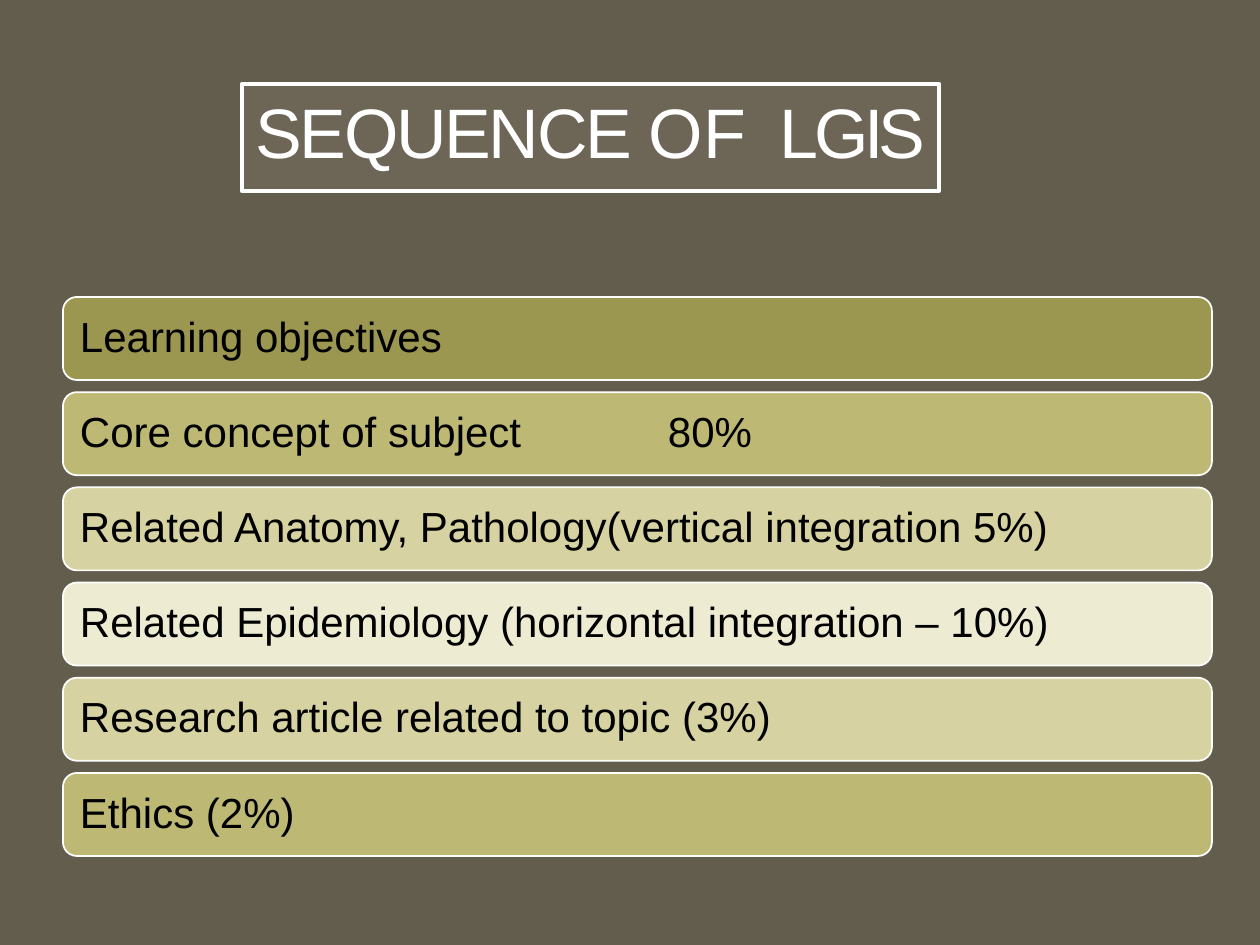
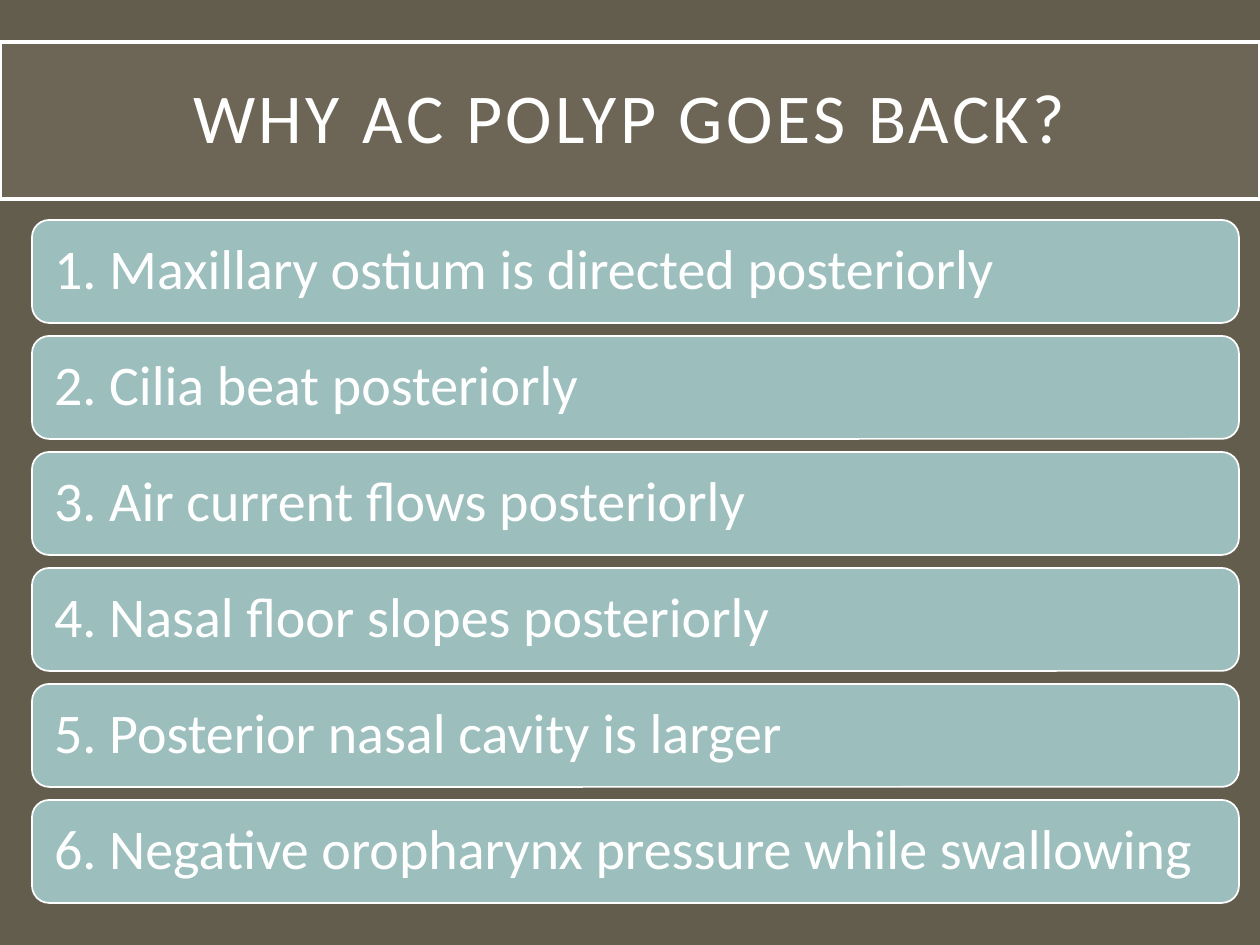
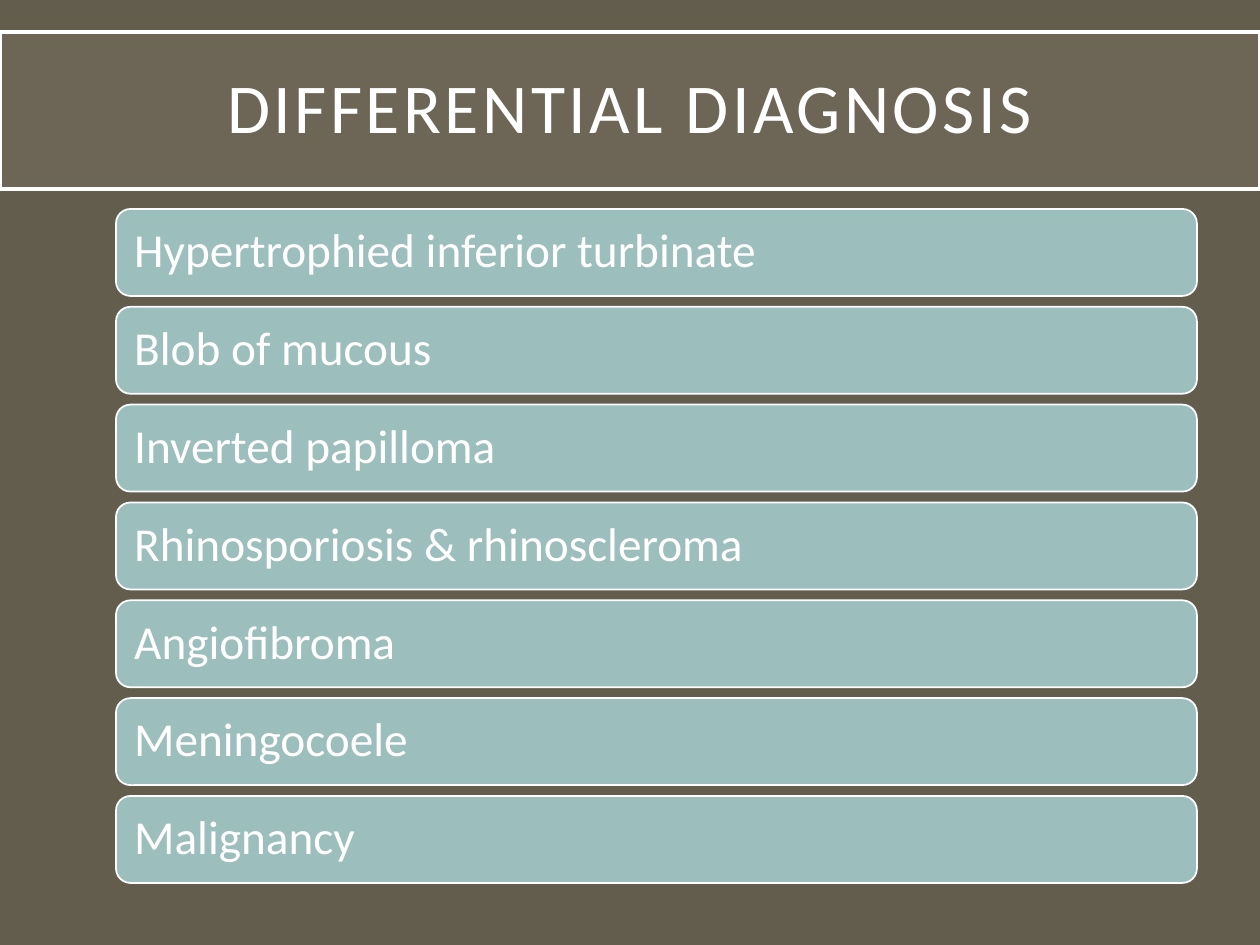
from lxml import etree
from pptx import Presentation
from pptx import util as u
from pptx.dml.color import RGBColor
from pptx.enum import shapes, text
from pptx.oxml.ns import qn

BACKGROUND = RGBColor(0x63, 0x5D, 0x4D)
BAND = RGBColor(0xA7, 0xA0, 0x8E)
WHITE = RGBColor(0xFF, 0xFF, 0xFF)
BLACK = RGBColor(0x00, 0x00, 0x00)
TEAL = RGBColor(0x9C, 0xBE, 0xBD)
OLIVE = RGBColor(0x9B, 0x96, 0x50)
KHAKI = RGBColor(0xBD, 0xB8, 0x74)
SAND = RGBColor(0xD7, 0xD2, 0xA1)
CREAM = RGBColor(0xED, 0xEB, 0xD1)

PX = 914400 // 126
TAB_STOP = 588
BAND_OPACITY = 15
WIDE_INSETS = (25, 25, 25, 25)

# Titles are (text, letter spacing in points) pieces; bars are (left, top, width, bottom).
SLIDES = [
    dict(
        title=[("SEQUENCE ", -1.3), ("OF ", -0.1), (" LGIS", -2.6)],
        title_box=(242, 84, 697, 107), title_insets=(9, 1, 9, 5), font="Arial",
        bars=(63, 297, 1149, 856), bar_height=83, inset=13, size=24, color=BLACK,
        fills=[OLIVE, KHAKI, SAND, CREAM, SAND, KHAKI],
        items=[
            "Learning objectives",
            "Core concept of subject\t80%",
            "Related Anatomy, Pathology(vertical integration 5%)",
            "Related Epidemiology (horizontal integration – 10%)",
            "Research article related to topic (3%)",
            "Ethics (2%)",
        ],
    ),
    dict(
        title=[("WHY AC POLYP GOES BACK?", 2)],
        title_box=(0, 42, 1260, 157), title_insets=WIDE_INSETS, font="Calibri",
        bars=(32, 220, 1207, 903), bar_height=103, inset=17, size=32, color=WHITE,
        fills=[TEAL] * 6,
        items=[
            "1. Maxillary ostium is directed posteriorly",
            "2. Cilia beat posteriorly",
            "3. Air current flows posteriorly",
            "4. Nasal floor slopes posteriorly",
            "5. Posterior nasal cavity is larger",
            "6. Negative oropharynx pressure while swallowing",
        ],
    ),
    dict(
        title=[("DIFFERENTIAL DIAGNOSIS", 2)],
        title_box=(0, 32, 1260, 157), title_insets=WIDE_INSETS, font="Calibri",
        bars=(116, 209, 1081, 883), bar_height=87, inset=14, size=27, color=WHITE,
        fills=[TEAL] * 7,
        items=[
            "Hypertrophied inferior turbinate",
            "Blob of mucous",
            "Inverted papilloma",
            "Rhinosporiosis & rhinoscleroma",
            "Angiofibroma",
            "Meningocoele",
            "Malignancy",
        ],
    ),
]


def px(*lengths):
    return [u.Emu(round(n * PX)) for n in lengths]


def paint(sp, fill, line_width):
    sp.fill.solid()
    sp.fill.fore_color.rgb = fill
    sp.line.color.rgb = WHITE
    sp.line.width = u.Pt(line_width)


def write(sp, pieces, *, font, size, color, align, insets):
    """Fill a shape with one paragraph of (text, letter spacing) pieces."""
    tf = sp.text_frame
    tf.word_wrap = True
    tf.auto_size = text.MSO_AUTO_SIZE.NONE
    tf.vertical_anchor = text.MSO_ANCHOR.MIDDLE
    tf.margin_left, tf.margin_top, tf.margin_right, tf.margin_bottom = px(*insets)
    p = tf.paragraphs[0]
    p.alignment = align
    p.line_spacing = 0.9
    for words, spacing in pieces:
        r = p.add_run()
        r.text = words
        r.font.name = font
        r.font.size = u.Pt(size)
        r.font.color.rgb = color
        if spacing:
            r.font._element.set("spc", str(round(spacing * 100)))
    return p


def add_title(s, data):
    sp = s.shapes.title
    sp.left, sp.top, sp.width, sp.height = px(*data["title_box"])
    paint(sp, BAND, 2.5)
    color = sp._element.spPr.find(qn("a:solidFill"))[0]
    etree.SubElement(color, qn("a:alpha"), val=str(BAND_OPACITY * 1000))
    write(sp, data["title"], font=data["font"], size=40, color=WHITE,
          align=text.PP_ALIGN.CENTER, insets=data["title_insets"])


def add_tab_stop(p, position):
    tabs = etree.SubElement(p._p.get_or_add_pPr(), qn("a:tabLst"))
    etree.SubElement(tabs, qn("a:tab"), pos=str(position * PX), algn="l")


def add_bars(s, data):
    left, top, width, bottom = data["bars"]
    height = data["bar_height"]
    pitch = (bottom - top - height) / (len(data["items"]) - 1)
    for i, (item, fill) in enumerate(zip(data["items"], data["fills"])):
        sp = s.shapes.add_shape(shapes.MSO_SHAPE.ROUNDED_RECTANGLE,
                                *px(left, top + i * pitch, width, height))
        sp.shadow.inherit = False
        paint(sp, fill, 1)
        p = write(sp, [(item, 0)], font=data["font"], size=data["size"],
                  color=data["color"], align=text.PP_ALIGN.LEFT,
                  insets=[data["inset"]] * 4)
        if "\t" in item:
            add_tab_stop(p, TAB_STOP)


def main():
    prs = Presentation()
    prs.slide_width, prs.slide_height = u.Inches(10), u.Inches(7.5)
    background = prs.slide_master.background.fill
    background.solid()
    background.fore_color.rgb = BACKGROUND
    title_only = prs.slide_layouts.get_by_name("Title Only")
    for data in SLIDES:
        s = prs.slides.add_slide(title_only)
        add_title(s, data)
        add_bars(s, data)
    prs.save("out.pptx")


if __name__ == "__main__":
    main()
